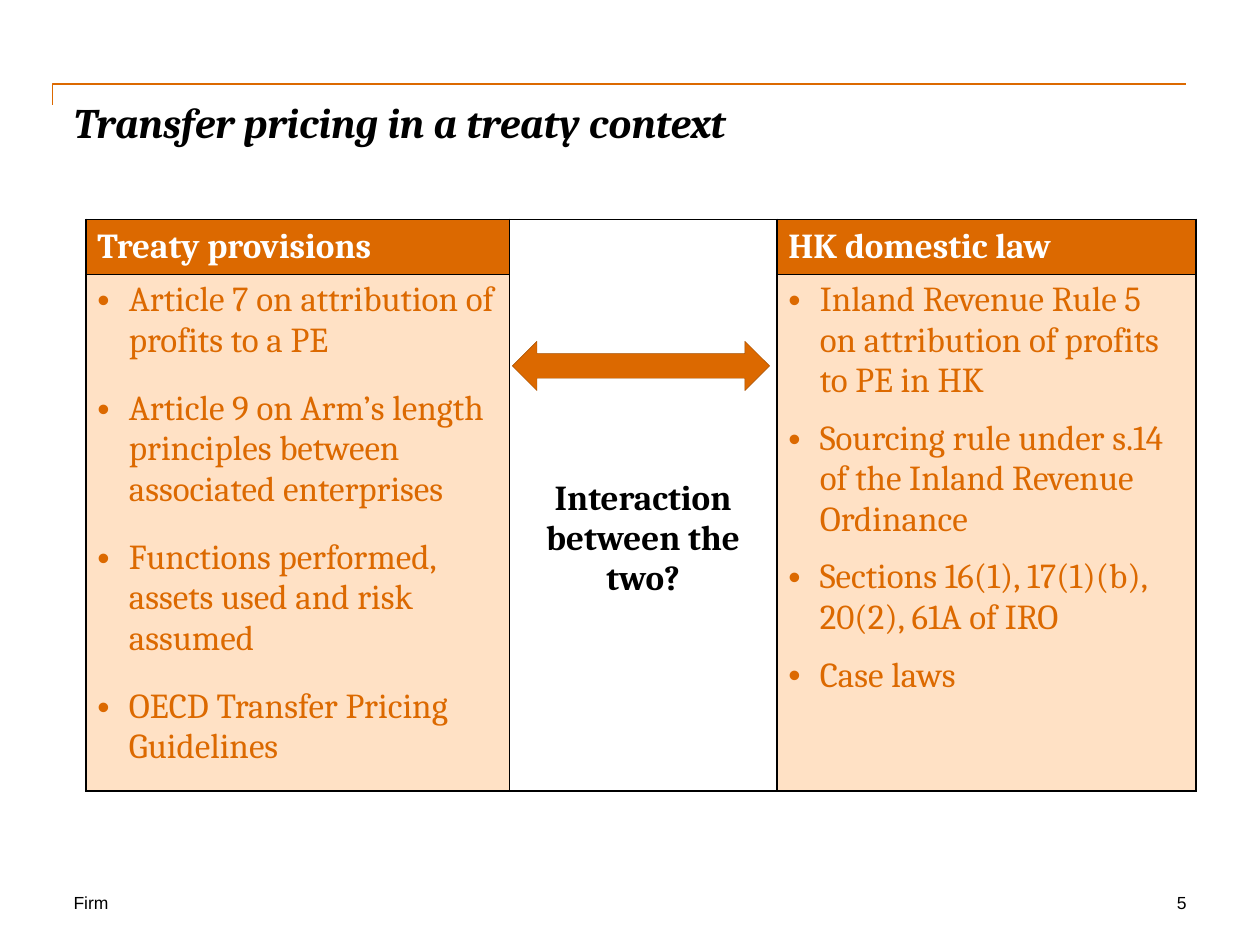
from dataclasses import dataclass

from lxml import etree
from pptx import Presentation
from pptx import util as u
from pptx.dml.color import RGBColor
from pptx.enum import shapes, text
from pptx.oxml import ns


@dataclass(frozen=True)
class Theme:
    accent: str = "DC6900"
    accent_dark: str = "A34E00"
    tint: str = "FFE1C5"
    ink: str = "000000"
    paper: str = "FFFFFF"
    serif: str = "Cambria"
    sans: str = "Arial"
    title: int = 24
    body: int = 20
    footer: int = 10


THEME = Theme()
COLUMNS, ROWS = 120, 90
SIDES = ("lnL", "lnR", "lnT", "lnB")

TREATY = [
    "Article 7 on attribution of profits to a PE",
    "Article 9 on Arm’s length principles between associated enterprises",
    "Functions performed, assets used and risk assumed",
    "OECD Transfer Pricing Guidelines",
]
DOMESTIC = [
    "Inland Revenue Rule 5 on attribution of profits to PE in HK",
    "Sourcing rule under s.14 of the Inland Revenue Ordinance",
    "Sections 16(1), 17(1)(b), 20(2), 61A of IRO",
    "Case laws",
]


def grid(units):
    return u.Inches(units / 12)


def rgb(color):
    return RGBColor.from_string(color)


def add_run(paragraph, words, size, color, font=THEME.serif, bold=False, italic=False):
    run = paragraph.add_run()
    run.text = words
    run.font.name = font
    run.font.size = u.Pt(size)
    run.font.color.rgb = rgb(color)
    run.font.bold = bold
    run.font.italic = italic


def add_label(slide, box, words, size, align=text.PP_ALIGN.LEFT, **style):
    frame = slide.shapes.add_textbox(*map(grid, box)).text_frame
    frame.word_wrap = True
    frame.margin_left = frame.margin_right = frame.margin_top = frame.margin_bottom = 0
    frame.paragraphs[0].alignment = align
    add_run(frame.paragraphs[0], words, size, THEME.ink, **style)


def add_title_rule(slide):
    builder = slide.shapes.build_freeform(grid(5), grid(10))
    builder.add_line_segments([(grid(5), grid(8)), (grid(113), grid(8))], close=False)
    shape = builder.convert_to_shape()
    shape.shadow.inherit = False
    shape.fill.background()
    shape.line.color.rgb = rgb(THEME.accent)
    shape.line.width = u.Pt(1)


def add_arrow(slide, box):
    shape = slide.shapes.add_shape(shapes.MSO_SHAPE.LEFT_RIGHT_ARROW, *map(grid, box))
    shape.shadow.inherit = False
    shape.fill.solid()
    shape.fill.fore_color.rgb = rgb(THEME.accent)
    shape.line.color.rgb = rgb(THEME.accent_dark)
    shape.line.width = u.Pt(0.25)


def style_cell(cell, fill, widths):
    properties = cell._tc.get_or_add_tcPr()
    for side, width in zip(SIDES, widths):
        line = etree.SubElement(properties, ns.qn(f"a:{side}"), w=str(u.Pt(width)))
        solid = etree.SubElement(line, ns.qn("a:solidFill"))
        etree.SubElement(solid, ns.qn("a:srgbClr"), val=THEME.ink)
    cell.fill.solid()
    cell.fill.fore_color.rgb = rgb(fill)
    cell.margin_left = cell.margin_right = u.Inches(0.09)
    cell.margin_top = cell.margin_bottom = u.Inches(0.05)


def fill_heading(cell, words, color, align=text.PP_ALIGN.LEFT):
    cell.vertical_anchor = text.MSO_ANCHOR.MIDDLE
    paragraph = cell.text_frame.paragraphs[0]
    paragraph.alignment = align
    add_run(paragraph, words, THEME.body, color, bold=True)


def add_bullet(paragraph):
    properties = paragraph._p.get_or_add_pPr()
    indent = u.Inches(0.25)
    properties.set("marL", str(indent))
    properties.set("indent", str(-indent))
    color = etree.SubElement(properties, ns.qn("a:buClr"))
    etree.SubElement(color, ns.qn("a:srgbClr"), val=THEME.accent)
    etree.SubElement(properties, ns.qn("a:buFont"), typeface=THEME.sans)
    etree.SubElement(properties, ns.qn("a:buChar"), char="•")


def fill_bullets(cell, items, space_before):
    frame = cell.text_frame
    for index, words in enumerate(items):
        paragraph = frame.add_paragraph() if index else frame.paragraphs[0]
        paragraph.space_before = u.Pt(space_before)
        paragraph.space_after = u.Pt(THEME.body / 2)
        add_bullet(paragraph)
        add_run(paragraph, words, THEME.body, THEME.accent)


def add_comparison(slide, left, top, widths, heights):
    box = (left, top, sum(widths), sum(heights))
    table = slide.shapes.add_table(len(heights), len(widths), *map(grid, box)).table
    table.first_row = table.horz_banding = False
    for column, width in zip(table.columns, widths):
        column.width = grid(width)
    for row, height in zip(table.rows, heights):
        row.height = grid(height)

    for column in (0, 2):
        style_cell(table.cell(0, column), THEME.accent, (1, 1, 1, 0.5))
        style_cell(table.cell(1, column), THEME.tint, (1, 1, 0.5, 1))
    for row in (0, 1):
        style_cell(table.cell(row, 1), THEME.paper, (1, 1, 1, 1))

    fill_heading(table.cell(0, 0), "Treaty provisions", THEME.paper)
    fill_heading(table.cell(0, 2), "HK domestic law", THEME.paper)
    fill_bullets(table.cell(1, 0), TREATY, 6)
    fill_bullets(table.cell(1, 2), DOMESTIC, 0)

    middle = table.cell(0, 1)
    middle.merge(table.cell(1, 1))
    middle.margin_top = u.Inches(0.59)
    fill_heading(middle, "Interaction between the two?", THEME.ink, text.PP_ALIGN.CENTER)


def main():
    presentation = Presentation()
    presentation.slide_width, presentation.slide_height = grid(COLUMNS), grid(ROWS)
    slide = presentation.slides.add_slide(presentation.slide_layouts[6])

    add_label(slide, (7, 85, 34, 2), "Firm", THEME.footer, font=THEME.sans)
    add_title_rule(slide)
    add_label(slide, (7, 9.2, 106, 6.7), "Transfer pricing in a treaty context",
              THEME.title, bold=True, italic=True)
    add_label(slide, (93, 85, 20, 2), "5", THEME.footer,
              text.PP_ALIGN.RIGHT, font=THEME.sans)
    add_comparison(slide, 8.2, 20.9, (40.3, 25.5, 39.9), (4.95, 47.6))
    add_arrow(slide, (48.8, 32.5, 24.5, 4.7))

    presentation.save("out.pptx")


if __name__ == "__main__":
    main()
